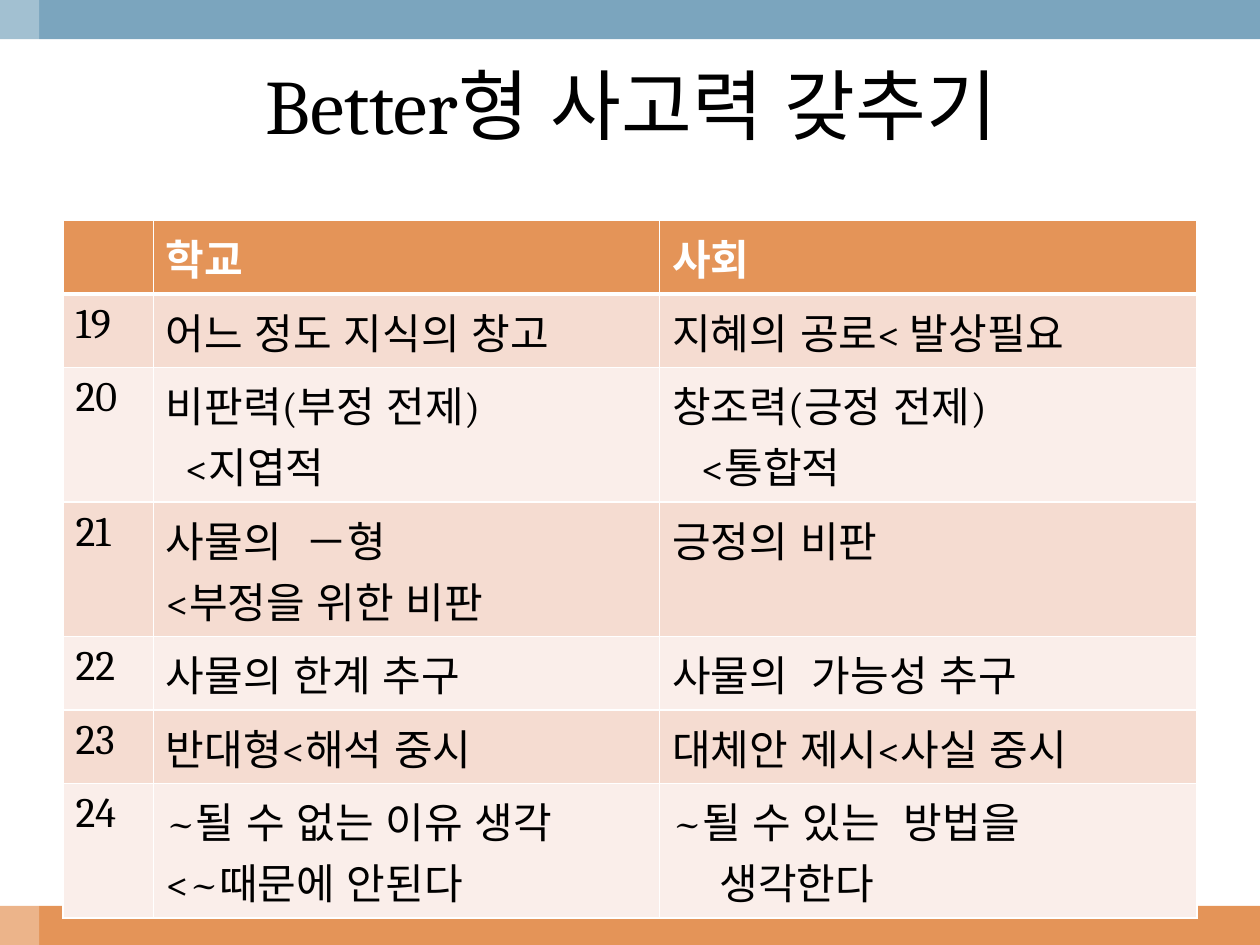
from lxml import etree
from pptx import Presentation
from pptx.dml.color import RGBColor
from pptx.enum import lang, shapes, text
from pptx.oxml import ns
from pptx.util import Pt

FONT = "Cambria"
WHITE = RGBColor(0xFF, 0xFF, 0xFF)
BLACK = RGBColor(0x00, 0x00, 0x00)
ORANGE = RGBColor(0xE4, 0x94, 0x58)
BLUE = RGBColor(0x7B, 0xA5, 0xBE)
PEACH = RGBColor(0xF5, 0xDC, 0xD1)
PALE = RGBColor(0xFA, 0xEE, 0xEA)

WIDTH, HEIGHT, BAND = 720, 540, 22.4
COLUMNS = (51.6, 289.4, 307)
ROW_HEIGHT = 29.2

# Each cell is a list of lines; a line is text or (text, indent in points)
ROWS = [
    ([], ["학교"], ["사회"]),
    (["19"], ["어느 정도 지식의 창고"], ["지혜의 공로< 발상필요"]),
    (["20"], ["비판력(부정 전제)", ("<지엽적", 11)],
     ["창조력(긍정 전제)", ("<통합적", 16.5)]),
    (["21"], ["사물의  －형", "<부정을 위한 비판"], ["긍정의 비판"]),
    (["22"], ["사물의 한계 추구"], ["사물의  가능성 추구"]),
    (["23"], ["반대형<해석 중시"], ["대체안 제시<사실 중시"]),
    (["24"], ["~될 수 없는 이유 생각", "<~때문에 안된다"],
     ["~될 수 있는  방법을", ("생각한다", 27)]),
]


def add_band(slide, x, y, w, h, color, alpha=None):
    sp = slide.shapes.add_shape(shapes.MSO_SHAPE.RECTANGLE,
                                Pt(x), Pt(y), Pt(w), Pt(h))
    sp.shadow.inherit = False
    sp.line.fill.background()
    sp.fill.solid()
    sp.fill.fore_color.rgb = color
    if alpha is not None:
        clr = sp._element.spPr.find(".//" + ns.qn("a:srgbClr"))
        etree.SubElement(clr, ns.qn("a:alpha"), val=str(alpha * 1000))


def add_run(p, words, size, color, bold=False):
    r = p.add_run()
    r.text = words
    r.font.size = Pt(size)
    r.font.bold = bold
    r.font.color.rgb = color
    r.font.name = FONT
    r.font.language_id = lang.MSO_LANGUAGE_ID.KOREAN


def add_title(slide, words):
    sp = slide.shapes.add_textbox(Pt(24), Pt(22.4), Pt(674), Pt(74))
    tf = sp.text_frame
    tf.word_wrap = True
    tf.vertical_anchor = text.MSO_ANCHOR.MIDDLE
    p = tf.paragraphs[0]
    p.alignment = text.PP_ALIGN.CENTER
    add_run(p, words, 44, BLACK)


def set_borders(cell, bottom):
    tcPr = cell._tc.get_or_add_tcPr()
    for side, width in (("L", 1), ("R", 1), ("T", 1), ("B", bottom)):
        ln = etree.SubElement(tcPr, ns.qn("a:ln" + side), w=str(Pt(width)))
        fill = etree.SubElement(ln, ns.qn("a:solidFill"))
        etree.SubElement(fill, ns.qn("a:srgbClr"), val=str(WHITE))


def fill_cell(cell, lines, header, fill):
    set_borders(cell, 3 if header else 1)
    cell.fill.solid()
    cell.fill.fore_color.rgb = fill
    tf = cell.text_frame
    for i, line in enumerate(lines):
        words, indent = (line, 0) if isinstance(line, str) else line
        p = tf.paragraphs[0] if i == 0 else tf.add_paragraph()
        if indent:
            p._p.get_or_add_pPr().set("marL", str(Pt(indent)))
        add_run(p, words, 24, WHITE if header else BLACK, header)


def add_comparison(slide):
    frame = slide.shapes.add_table(len(ROWS), len(COLUMNS), Pt(36), Pt(126),
                                   Pt(sum(COLUMNS)), Pt(ROW_HEIGHT * len(ROWS)))
    table = frame.table
    for column, width in zip(table.columns, COLUMNS):
        column.width = Pt(width)
    for i, row in enumerate(ROWS):
        table.rows[i].height = Pt(ROW_HEIGHT)
        fill = ORANGE if i == 0 else (PALE, PEACH)[i % 2]
        for j, lines in enumerate(row):
            fill_cell(table.cell(i, j), lines, i == 0, fill)


def main():
    prs = Presentation()
    prs.slide_width, prs.slide_height = Pt(WIDTH), Pt(HEIGHT)
    slide = prs.slides.add_slide(prs.slide_layouts[6])

    # Bands at the bottom and top, with a translucent strip on the left
    add_band(slide, 0, HEIGHT - BAND, WIDTH, BAND, ORANGE)
    add_band(slide, 0, 0, WIDTH, BAND, BLUE)
    add_band(slide, 0, 0, BAND, HEIGHT, WHITE, alpha=30)

    # School and society compared
    add_comparison(slide)
    add_title(slide, "Better형 사고력 갖추기")

    prs.save("out.pptx")


if __name__ == "__main__":
    main()
